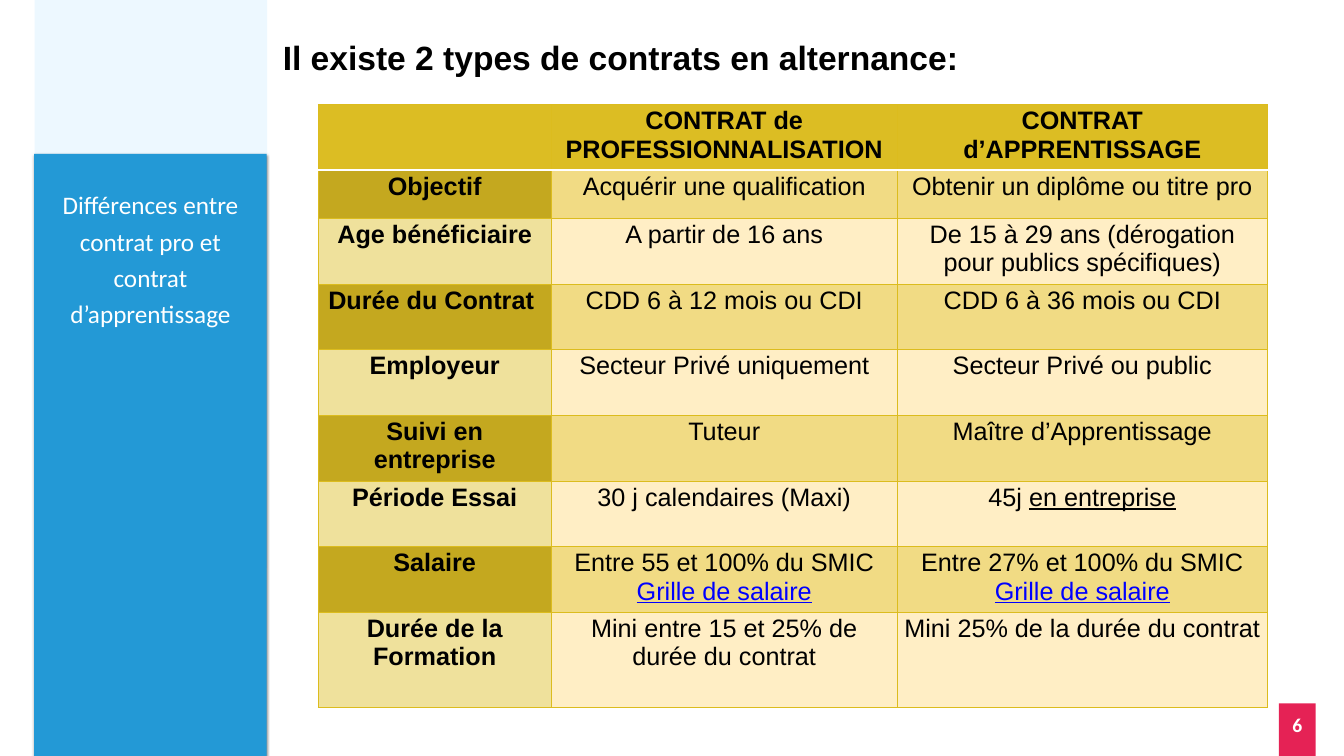
from dataclasses import dataclass

from lxml import etree
from pptx import Presentation
from pptx import util as u
from pptx.dml.color import RGBColor
from pptx.enum import shapes, text
from pptx.oxml import ns

EMU_PER_PX = 9525


@dataclass(frozen=True)
class Theme:
    heading_font: str = "Arial"
    side_font: str = "Calibri"
    title_size: int = 48
    text_size: int = 36
    number_size: int = 28
    black: str = "000000"
    white: str = "FFFFFF"
    link: str = "0000FF"
    pale_blue: str = "EDF8FF"
    blue: str = "2399D6"
    pink: str = "E52255"
    border: str = "DCBC1E"
    header: str = "DCBD23"
    label_bands: tuple = ("C4A81F", "EFE19C")
    value_bands: tuple = ("F1DB84", "FFEEC5")


THEME = Theme()


@dataclass(frozen=True)
class Run:
    text: str
    color: str = THEME.black
    underline: bool = False


SALARY_GRID = Run("Grille de salaire", THEME.link, True)

# A cell is a list of paragraphs, and a paragraph is a list of runs.
# A plain string stands for one paragraph with one run.
ROWS = [
    ("", "CONTRAT de PROFESSIONNALISATION", "CONTRAT d’APPRENTISSAGE"),
    ("Objectif", "Acquérir une qualification", "Obtenir un diplôme ou titre pro"),
    ("Age bénéficiaire", "A partir de 16 ans",
     "De 15 à 29 ans (dérogation pour publics spécifiques)"),
    ("Durée du Contrat ", "CDD 6 à 12 mois ou CDI", "CDD 6 à 36 mois ou CDI"),
    ("Employeur", "Secteur Privé uniquement", "Secteur Privé ou public"),
    ("Suivi en entreprise", "Tuteur", "Maître d’Apprentissage"),
    ("Période Essai", "30 j calendaires (Maxi)",
     [[Run("45j "), Run("en entreprise", underline=True)]]),
    ("Salaire",
     [[Run("Entre 55 et 100% du SMIC")], [SALARY_GRID]],
     [[Run("Entre 27% et 100% du SMIC")], [SALARY_GRID]]),
    ("Durée de la Formation", "Mini entre 15 et 25% de durée du contrat",
     "Mini 25% de la durée du contrat"),
]
COLUMN_WIDTHS = [444, 659, 705]
ROW_HEIGHTS = [125, 92] + [125] * 6 + [181]


def px(value):
    return u.Emu(value * EMU_PER_PX)


def rgb(color):
    return RGBColor.from_string(color)


def add_run(paragraph, run, font, size, bold=False):
    paragraph.alignment = text.PP_ALIGN.CENTER
    part = paragraph.add_run()
    part.text = run.text
    part.font.name = font
    part.font.size = u.Pt(size)
    part.font.bold = bold
    part.font.underline = run.underline
    part.font.color.rgb = rgb(run.color)


def add_rectangle(group, box, color):
    shape = group.shapes.add_shape(shapes.MSO_SHAPE.RECTANGLE, *map(px, box))
    shape.shadow.inherit = False
    shape.fill.solid()
    shape.fill.fore_color.rgb = rgb(color)
    shape.line.fill.background()
    return shape


def add_drop_shadow(shape):
    effects = shape._element.spPr.find(ns.qn("a:effectLst"))
    shadow = etree.SubElement(effects, ns.qn("a:outerShdw"), blurRad=str(u.Pt(4)),
                              dist=str(u.Pt(2)), dir="5400000", rotWithShape="0")
    color = etree.SubElement(shadow, ns.qn("a:srgbClr"), val=THEME.black)
    etree.SubElement(color, ns.qn("a:alpha"), val="50000")


def add_label(group, box, content, size, bold=False):
    frame = group.shapes.add_textbox(*map(px, box)).text_frame
    frame.word_wrap = True
    add_run(frame.paragraphs[0], Run(content, THEME.white), THEME.side_font, size, bold)
    return frame


def fit_text(frame):
    """Centre the text vertically and use even, narrow insets."""
    frame.word_wrap = True
    frame.vertical_anchor = text.MSO_ANCHOR.MIDDLE
    frame.auto_size = text.MSO_AUTO_SIZE.SHAPE_TO_FIT_TEXT
    frame.margin_left = frame.margin_right = px(8)
    frame.margin_top = frame.margin_bottom = px(8)


def add_sidebar(slide):
    group = slide.shapes.add_group_shape()
    add_rectangle(group, (66, 0, 443, 1082), THEME.pale_blue)
    add_drop_shadow(add_rectangle(group, (65, 293, 443, 1147), THEME.blue))
    frame = add_label(group, (109, 343, 355, 290),
                      "Différences entre contrat pro et contrat d’apprentissage",
                      THEME.text_size)
    fit_text(frame)
    frame.paragraphs[0].line_spacing = 1.2


def add_page_number(slide):
    group = slide.shapes.add_group_shape()
    add_rectangle(group, (2436, 1340, 70, 100), THEME.pink)
    add_label(group, (2436, 1354, 70, 74), "6", THEME.number_size, bold=True)


def set_title(slide, content):
    title = slide.shapes.title
    title.left, title.top, title.width, title.height = map(px, (435, 62, 1495, 93))
    fit_text(title.text_frame)
    add_run(title.text_frame.paragraphs[0], Run(content), THEME.heading_font,
            THEME.title_size, bold=True)


def set_border(cell, side, index, color, width):
    line = etree.Element(ns.qn(f"a:ln{side}"), w=str(u.Pt(width)))
    fill = etree.SubElement(line, ns.qn("a:solidFill"))
    etree.SubElement(fill, ns.qn("a:srgbClr"), val=color)
    cell._tc.get_or_add_tcPr().insert(index, line)


def cell_color(row, column):
    if row == 0:
        return THEME.header
    bands = THEME.label_bands if column == 0 else THEME.value_bands
    return bands[(row - 1) % 2]


def fill_cell(cell, content, row, column):
    cell.fill.solid()
    cell.fill.fore_color.rgb = rgb(cell_color(row, column))
    for index, side in enumerate("LRTB"):
        under_header = (row, side) in ((0, "B"), (1, "T"))
        color, width = (THEME.white, 2) if under_header else (THEME.border, 0.75)
        set_border(cell, side, index, color, width)
    if not content:
        return
    paragraphs = [[Run(content)]] if isinstance(content, str) else content
    frame = cell.text_frame
    for index, runs in enumerate(paragraphs):
        paragraph = frame.add_paragraph() if index else frame.paragraphs[0]
        for run in runs:
            add_run(paragraph, run, THEME.heading_font, THEME.text_size,
                    bold=row == 0 or column == 0)


def add_contract_table(slide):
    frame = slide.shapes.add_table(
        len(ROWS), len(COLUMN_WIDTHS), px(606), px(199),
        px(sum(COLUMN_WIDTHS)), px(sum(ROW_HEIGHTS)))
    table = frame.table
    for column, width in zip(table.columns, COLUMN_WIDTHS):
        column.width = px(width)
    for row, height in zip(table.rows, ROW_HEIGHTS):
        row.height = px(height)
    for row, contents in enumerate(ROWS):
        for column, content in enumerate(contents):
            fill_cell(table.cell(row, column), content, row, column)


def main():
    presentation = Presentation()
    presentation.slide_width, presentation.slide_height = px(2560), px(1440)
    slide = presentation.slides.add_slide(presentation.slide_layouts.get_by_name("Title Only"))
    add_sidebar(slide)
    add_page_number(slide)
    add_contract_table(slide)
    set_title(slide, "Il existe 2 types de contrats en alternance:")
    presentation.save("out.pptx")


if __name__ == "__main__":
    main()
